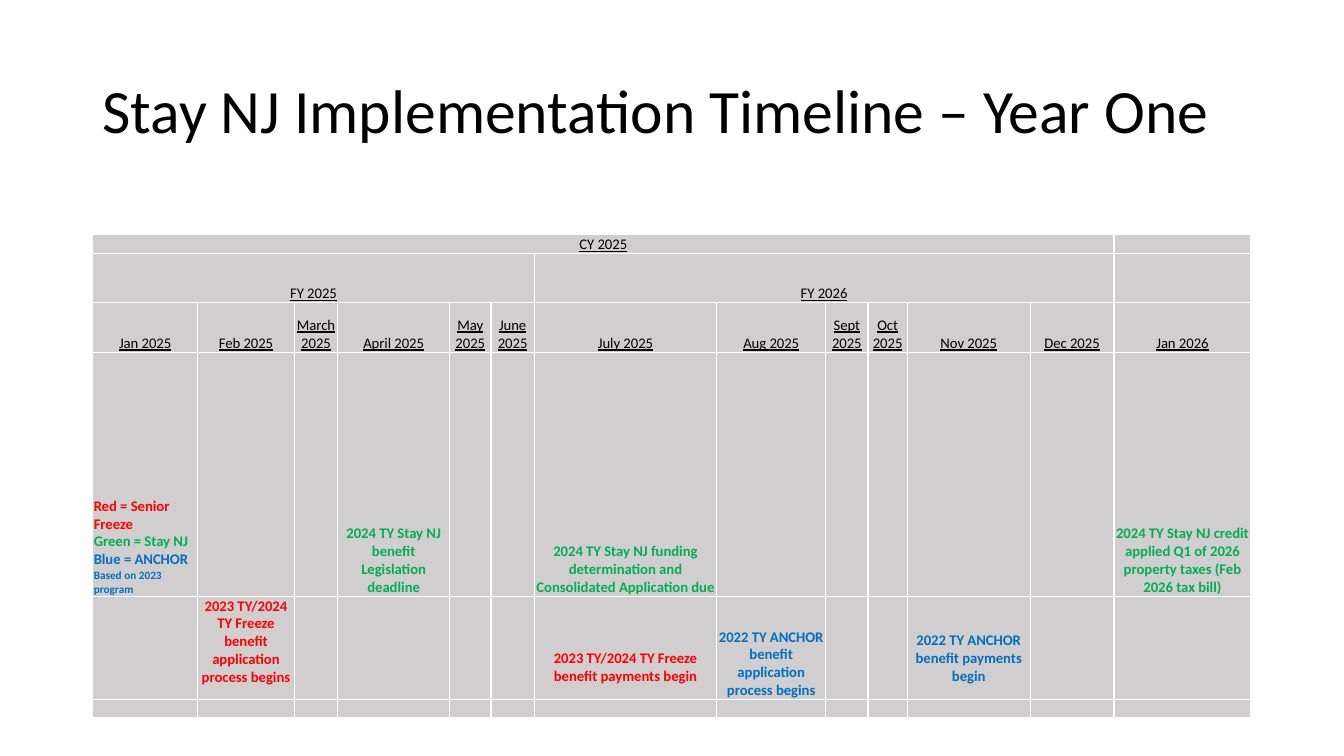
from lxml.etree import SubElement
from pptx import Presentation
from pptx.dml.color import RGBColor
from pptx.enum.text import MSO_ANCHOR as Anchor, PP_ALIGN as Align
from pptx.oxml.ns import qn
from pptx.util import Inches, Pt

RED, GREEN, BLUE, BLACK = "FF0000", "00B050", "0070C0", "000000"
GREY, WHITE = "D0CECE", "FFFFFF"

COLUMN_WIDTHS = [1.04, 0.96, 0.43, 1.11, 0.41, 0.43, 1.81,
                 1.08, 0.42, 0.39, 1.22, 0.83, 1.36]
ROW_HEIGHTS = [0.18, 0.49, 0.49, 2.42, 0.69, 0.18]
MONTHS = ["Jan 2025", "Feb 2025", "March 2025", "April 2025", "May 2025",
          "June 2025", "July 2025", "Aug 2025", "Sept 2025", "Oct 2025",
          "Nov 2025", "Dec 2025", "Jan 2026"]
# Row, first column, last column, label
PERIODS = [(0, 0, 11, "CY 2025"), (1, 0, 5, "FY 2025"), (1, 6, 11, "FY 2026")]
LEGEND = [("Red = Senior Freeze", RED, 10.5), ("Green = Stay NJ", GREEN, 10.5),
          ("Blue = ANCHOR", BLUE, 10.5), ("Based on 2023 program", BLUE, 8)]
# Row, column, colour, bottom margin, text
EVENTS = [
    (3, 3, GREEN, 0, "2024 TY Stay NJ benefit Legislation deadline"),
    (3, 6, GREEN, 0, "2024 TY Stay NJ funding determination and "
                     "Consolidated Application due"),
    (3, 12, GREEN, 0, "2024 TY Stay NJ credit applied Q1 of 2026 "
                      "property taxes (Feb 2026 tax bill)"),
    (4, 1, RED, 0.14, "2023 TY/2024 TY Freeze benefit application process begins"),
    (4, 6, RED, 0.14, "2023 TY/2024 TY Freeze benefit payments begin"),
    (4, 7, BLUE, 0, "2022 TY ANCHOR benefit application process begins"),
    (4, 10, BLUE, 0.14, "2022 TY ANCHOR benefit payments begin"),
]


def color(value):
    return RGBColor.from_string(value)


def write(paragraph, text, size=10.5, ink=BLACK, font="Calibri", bold=False,
          underline=False, align=Align.CENTER):
    paragraph.alignment = align
    run = paragraph.add_run()
    run.text = text
    run.font.name = font
    run.font.size = Pt(size)
    run.font.bold = bold
    run.font.underline = underline
    run.font.color.rgb = color(ink)


class TimelineSlide:
    def __init__(self, presentation):
        self.slide = presentation.slides.add_slide(presentation.slide_layouts[6])
        self.fill, self.border, self.margin = GREY, WHITE, 0.01

    def title(self, text, left, top, width, height):
        box = self.slide.shapes.add_textbox(
            Inches(left), Inches(top), Inches(width), Inches(height))
        frame = box.text_frame
        frame.word_wrap = True
        frame.vertical_anchor = Anchor.MIDDLE
        write(frame.paragraphs[0], text, size=44, align=Align.LEFT)
        frame.paragraphs[0].line_spacing = 0.9

    def table(self, left, top, widths, heights):
        shape = self.slide.shapes.add_table(
            len(heights), len(widths), Inches(left), Inches(top),
            Inches(sum(widths)), Inches(sum(heights)))
        table = shape.table
        table.first_row = table.horz_banding = False
        for column, width in zip(table.columns, widths):
            column.width = Inches(width)
        for row, height in zip(table.rows, heights):
            row.height = Inches(height)
        for cell in table.iter_cells():
            self.style_cell(cell)
        return table

    def style_cell(self, cell):
        cell.margin_left = cell.margin_right = cell.margin_top = Inches(self.margin)
        cell.margin_bottom = 0
        cell.vertical_anchor = Anchor.BOTTOM
        properties = cell._tc.get_or_add_tcPr()
        for side in ("a:lnL", "a:lnR", "a:lnT", "a:lnB"):
            line = SubElement(properties, qn(side), w=str(Pt(1)))
            SubElement(SubElement(line, qn("a:solidFill")), qn("a:srgbClr"),
                       val=self.border)
        cell.fill.solid()
        cell.fill.fore_color.rgb = color(self.fill)
        # Empty cells keep the body size so that thin rows stay thin
        paragraph = cell.text_frame.paragraphs[0]
        SubElement(paragraph._p, qn("a:endParaRPr"), sz="1050")


def main():
    presentation = Presentation()
    presentation.slide_width = Inches(13.33)
    presentation.slide_height = Inches(7.5)
    timeline = TimelineSlide(presentation)

    timeline.title("Stay NJ Implementation Timeline – Year One",
                   0.92, 0.4, 11.5, 1.45)
    table = timeline.table(0.92, 2.33, COLUMN_WIDTHS, ROW_HEIGHTS)

    # Year and month headings
    for row, first, last, label in PERIODS:
        cell = table.cell(row, first)
        cell.merge(table.cell(row, last))
        write(cell.text_frame.paragraphs[0], label, underline=True)
    for column, month in enumerate(MONTHS):
        write(table.cell(2, column).text_frame.paragraphs[0], month, underline=True)

    # Colour key
    frame = table.cell(3, 0).text_frame
    for index, (text, ink, size) in enumerate(LEGEND):
        paragraph = frame.add_paragraph() if index else frame.paragraphs[0]
        write(paragraph, text, size=size, ink=ink, bold=True, align=Align.LEFT)

    # Programme events
    for row, column, ink, bottom, text in EVENTS:
        cell = table.cell(row, column)
        cell.margin_bottom = Inches(bottom)
        write(cell.text_frame.paragraphs[0], text, ink=ink, bold=True)

    presentation.save("out.pptx")


if __name__ == "__main__":
    main()
